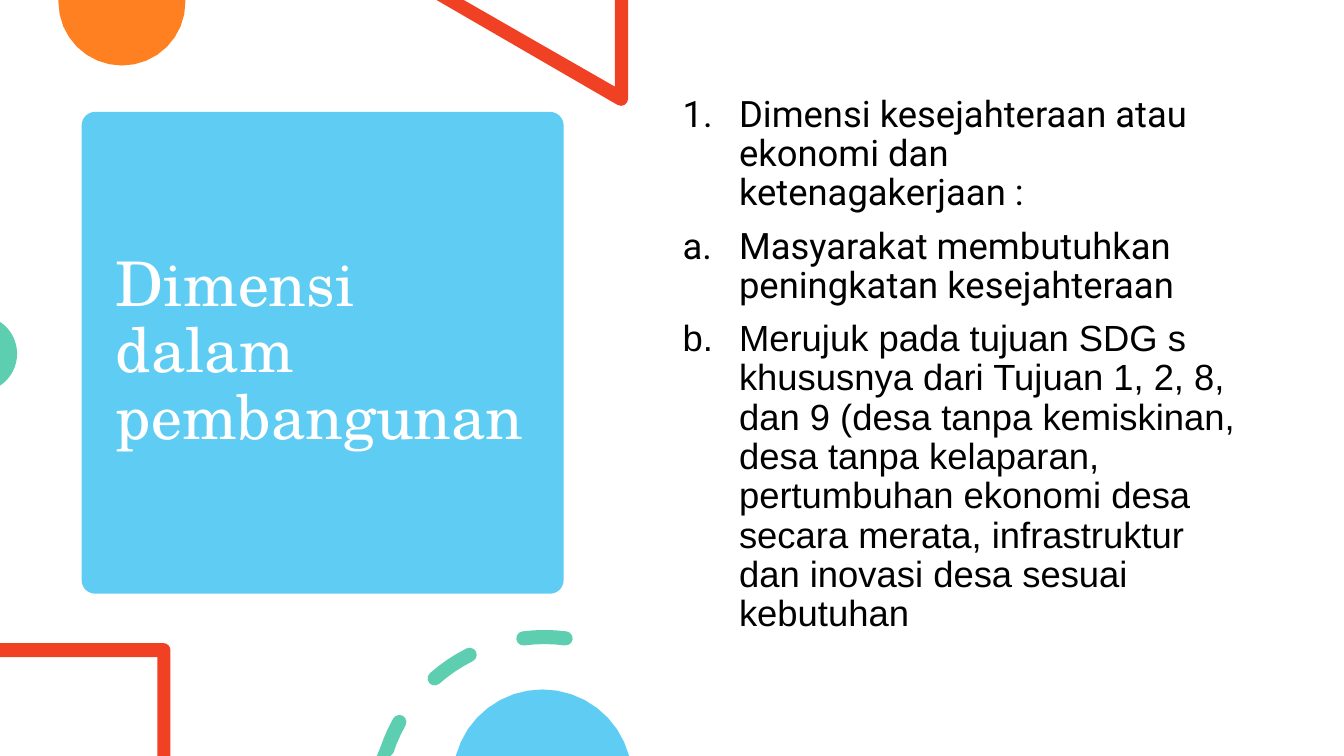
from math import cos, radians, sin

from lxml.etree import SubElement
from pptx import Presentation
from pptx.dml.color import RGBColor
from pptx.enum.shapes import MSO_SHAPE
from pptx.enum.text import MSO_ANCHOR, MSO_AUTO_SIZE, PP_ALIGN
from pptx.oxml.ns import qn
from pptx.util import Inches, Pt

WIDTH, HEIGHT = 13.33, 7.5
BLUE, GREEN, ORANGE, RED = "5ECCF3", "5DCEAF", "FF8021", "F14124"
WHITE, BLACK = "FFFFFF", "000000"
STROKE_RADIUS = 0.07

TITLE = "Dimensi dalam pembangunan"
# Text, font, numbering scheme, space before in points
DIMENSIONS = [
    ("Dimensi kesejahteraan atau ekonomi dan ketenagakerjaan :",
     "Roboto", "arabicPeriod", 0),
    ("Masyarakat membutuhkan peningkatan kesejahteraan",
     "Roboto", "alphaLcPeriod", 10),
    ("Merujuk pada tujuan SDG s khususnya dari Tujuan 1, 2, 8, dan 9 "
     "(desa tanpa kemiskinan, desa tanpa kelaparan, pertumbuhan ekonomi desa "
     "secara merata, infrastruktur dan inovasi desa sesuai kebutuhan",
     "Arial", "alphaLcPeriod", 10),
]


def color(hex_value):
    return RGBColor.from_string(hex_value)


def apply(target, formats):
    for name, value in formats.items():
        setattr(target, name, value)


def paint(shape, fill):
    shape.shadow.inherit = False
    shape.fill.solid()
    shape.fill.fore_color.rgb = color(fill)
    shape.line.fill.background()


def point_on_circle(x, y, radius, degrees):
    return x + radius * cos(radians(degrees)), y + radius * sin(radians(degrees))


def arc(x, y, radius, start, end, steps=16):
    """Points on a circle; angles in degrees, clockwise from the right."""
    return [point_on_circle(x, y, radius, start + (end - start) * i / steps)
            for i in range(steps + 1)]


def add_outline(slide, fill, *contours):
    builder = None
    for contour in contours:
        first, *rest = [(Inches(x), Inches(y)) for x, y in contour]
        if builder is None:
            builder = slide.shapes.build_freeform(*first)
        else:
            builder.move_to(*first)
        builder.add_line_segments(rest, close=True)
    paint(builder.convert_to_shape(), fill)


def ring_dash(x, y, radius, middle, half_span):
    """A round-ended piece of a ring, cut off at the foot of the slide."""
    start, end = middle - half_span, middle + half_span
    start_center = point_on_circle(x, y, radius, start)
    end_center = point_on_circle(x, y, radius, end)
    points = (arc(x, y, radius + STROKE_RADIUS, start, end, 4)
              + arc(*end_center, STROKE_RADIUS, end, end + 180, 6)
              + arc(x, y, radius - STROKE_RADIUS, end, start, 4)
              + arc(*start_center, STROKE_RADIUS, start + 180, start + 360, 6))
    return [(px, min(py, HEIGHT)) for px, py in points]


def add_decorations(slide):
    # Circles cut by the slide edges
    add_outline(slide, ORANGE, [(0.58, 0), (1.84, 0)] + arc(1.21, 0.02, 0.63, 0, 180))
    add_outline(slide, GREEN, arc(-0.21, 3.51, 0.38, -56, 56))
    add_outline(slide, BLUE, arc(5.38, 7.73, 0.89, 195, 345))
    # Red triangle and square
    add_outline(slide, RED, [(4.6, 0), (4.33, 0)]
                + arc(6.16, 0.98, STROKE_RADIUS, 120, 0, 4)
                + [(6.23, 0), (6.1, 0), (6.1, 0.86)])
    add_outline(slide, RED, [(0, 6.52), (0, 6.38)]
                + arc(1.62, 6.45, STROKE_RADIUS, 270, 360, 4)
                + [(1.69, HEIGHT), (1.56, HEIGHT), (1.56, 6.52)])
    # Dashed ring
    add_outline(slide, GREEN, *[ring_dash(5.4, 7.97, 1.65, 270 - 34 * i, 7.3)
                                for i in range(3)])


def add_card(slide):
    card = slide.shapes.add_shape(MSO_SHAPE.ROUNDED_RECTANGLE, Inches(0.81),
                                  Inches(1.11), Inches(4.78), Inches(4.78))
    card.adjustments[0] = 0.028
    paint(card, BLUE)


def place(placeholder, left, top, width, height, anchor):
    """Position a placeholder and bring it to the front."""
    apply(placeholder, {"left": Inches(left), "top": Inches(top),
                        "width": Inches(width), "height": Inches(height)})
    apply(placeholder.text_frame, {"word_wrap": True, "vertical_anchor": anchor,
                                   "auto_size": MSO_AUTO_SIZE.NONE})
    placeholder.element.getparent().append(placeholder.element)


def write(paragraph, text, font, size, text_color, before=0):
    run = paragraph.add_run()
    run.text = text
    apply(run.font, {"name": font, "size": Pt(size)})
    run.font.color.rgb = color(text_color)
    apply(paragraph, {"alignment": PP_ALIGN.LEFT, "line_spacing": 0.9,
                      "space_before": Pt(before), "space_after": Pt(0)})


def number(paragraph, scheme):
    properties = paragraph._p.get_or_add_pPr()
    properties.set("marL", str(Inches(0.56)))
    properties.set("indent", str(-Inches(0.56)))
    SubElement(properties, qn("a:buFont"), typeface="+mj-lt")
    SubElement(properties, qn("a:buAutoNum"), type=scheme)


def fill_title(title):
    place(title, 1.05, 1.22, 4.31, 4.56, MSO_ANCHOR.MIDDLE)
    write(title.text_frame.paragraphs[0], TITLE, "TeX Gyre Schola", 44, WHITE)


def fill_dimensions(body):
    place(body, 6.67, 0.9, 5.75, 5.35, MSO_ANCHOR.TOP)
    frame = body.text_frame
    for i, (text, font, scheme, before) in enumerate(DIMENSIONS):
        paragraph = frame.add_paragraph() if i else frame.paragraphs[0]
        write(paragraph, text, font, 26, BLACK, before)
        number(paragraph, scheme)


def main():
    deck = Presentation()
    apply(deck, {"slide_width": Inches(WIDTH), "slide_height": Inches(HEIGHT)})
    slide = deck.slides.add_slide(deck.slide_layouts[1])
    slide.background.fill.solid()
    slide.background.fill.fore_color.rgb = color(WHITE)
    title, body = slide.placeholders
    add_card(slide)
    add_decorations(slide)
    fill_title(title)
    fill_dimensions(body)
    deck.save("out.pptx")


if __name__ == "__main__":
    main()
